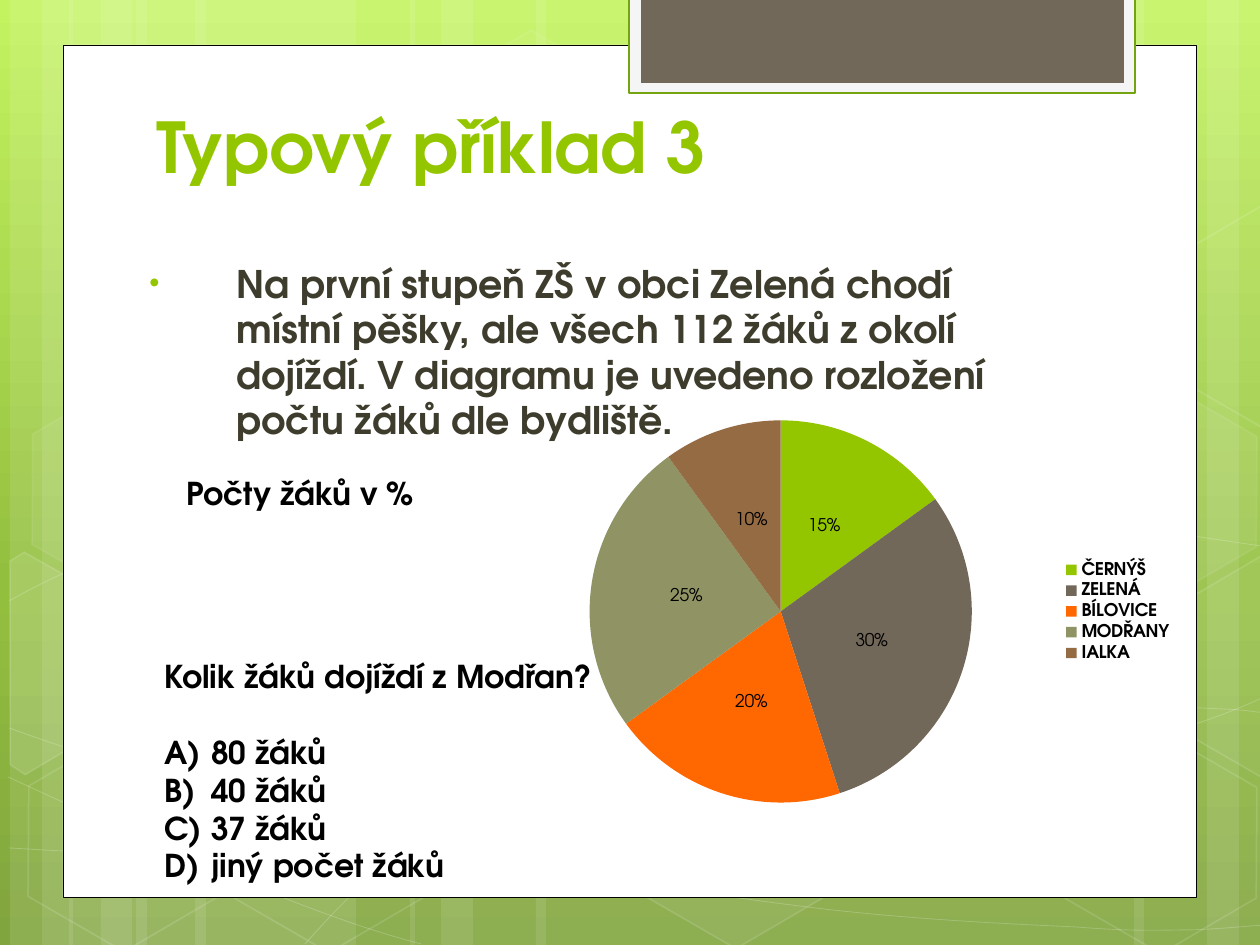
import math
import pptx
import pptx.util
import pptx.chart.data
import pptx.dml.color
import pptx.enum.chart
import pptx.enum.shapes
import pptx.enum.text
import pptx.oxml
import pptx.oxml.ns
import lxml.etree

FONT = "TeX Gyre Adventor"
COLORS = {
    "sky": "C3F35F", "grass": "93BF3F", "moss": "81A53E", "white": "FFFFFF",
    "black": "000000", "tab": "F5F5F5", "tab_line": "74A510", "lime": "94C600",
    "taupe": "71685A", "orange": "FF6700", "sage": "909465", "brown": "956B43",
    "olive": "3E3D2D",
}
SHAPES = pptx.enum.shapes.MSO_SHAPE
qn = pptx.oxml.ns.qn


def px(length):
    return pptx.util.Emu(round(length * 914400 / 126))


def rgb(name):
    return pptx.dml.color.RGBColor.from_string(COLORS[name])


def add_child(parent, tag, **attributes):
    return lxml.etree.SubElement(parent, qn(tag), {k: str(v) for k, v in attributes.items()})


def paint(fill, color, opacity=100):
    """Fill with a colour, or with nothing at zero opacity."""
    if not opacity:
        fill.background()
        return
    fill.solid()
    fill.fore_color.rgb = rgb(color)
    if opacity < 100:
        node = fill._xPr.find(qn("a:solidFill"))
        add_child(node[0], "a:alpha", val=opacity * 1000)


def style(shape, fill, opacity=100, line=None, width=1, line_opacity=100):
    shape.shadow.inherit = False
    paint(shape.fill, fill, opacity)
    if line:
        shape.line.width = pptx.util.Pt(width)
        paint(shape.line.fill, line, line_opacity)
    else:
        shape.line.fill.background()


def add_rect(page, box, *args, **kwargs):
    shape = page.shapes.add_shape(SHAPES.RECTANGLE, *map(px, box))
    style(shape, *args, **kwargs)


def add_outline(page, points, closed):
    builder = page.shapes.build_freeform(*points[0], scale=px(1))
    builder.add_line_segments(points[1:], close=closed)
    return builder.convert_to_shape()


def add_curve(page, points):
    """Joined cubic curves: a start, then three points per curve."""
    shape = add_outline(page, points, False)
    lines = shape._element.findall(".//" + qn("a:lnTo"))
    for first, second, third in zip(lines[::3], lines[1::3], lines[2::3]):
        first.tag = qn("a:cubicBezTo")
        for line in (second, third):
            first.append(line[0])
            line.getparent().remove(line)
    style(shape, "white", 0, "white", 0.5, 20)


def add_cut_hexagon(page, center, points, opacity):
    """Outline turned by 30 degrees around its center."""
    cos, sin = math.cos(math.pi / 6), math.sin(math.pi / 6)
    upright = []
    for x, y in points:
        dx, dy = x - center[0], y - center[1]
        upright.append((center[0] + dx * cos + dy * sin, center[1] - dx * sin + dy * cos))
    shape = add_outline(page, upright, True)
    shape.rotation = 30
    style(shape, "white", opacity, "white", 1, 12)


def add_backdrop(page, height):
    # Vertical gradient
    fill = page.background.fill
    fill.gradient()
    fill.gradient_angle = 270
    stops = page._element.find(".//" + qn("a:gsLst"))
    for stop in list(stops):
        stops.remove(stop)
    for position, color in ((0, "sky"), (62, "grass"), (100, "moss")):
        stop = add_child(stops, "a:gs", pos=position * 1000)
        add_child(stop, "a:srgbClr", val=COLORS[color])

    # Light stripes
    stripes = ((136, 220), (10, 63), (42, 105), (195, 220), (69, 63), (101, 105),
               (924, 220), (1207, 63), (1134, 105), (536, 388), (410, 63), (441, 105))
    for left, stripe_width in stripes:
        add_rect(page, (left, 0, stripe_width, height), "white", 10)

    # Sweeping curves
    curves = (
        ((9, 848), (77, 852), (145, 856), (239, 854), (334, 853), (451, 851), (577, 838),
         (703, 825), (882, 801), (998, 777), (1113, 753), (1231, 716), (1269, 694)),
        ((9, 601), (45, 581), (82, 562), (152, 543), (224, 524), (326, 496), (437, 488),
         (549, 479), (685, 478), (824, 488), (963, 498), (1193, 537), (1269, 547)),
        ((8, 777), (160, 847), (311, 916), (421, 944)),
        ((9, 728), (48, 742), (88, 756), (161, 776), (234, 795), (344, 827), (450, 848),
         (554, 869), (687, 892), (791, 905), (896, 919), (1008, 924), (1075, 927),
         (1140, 932), (1158, 930), (1191, 930), (1223, 929), (1246, 926), (1269, 925)),
        ((305, 944), (328, 919), (350, 893), (381, 871), (411, 848), (454, 823), (489, 805),
         (524, 788), (546, 780), (592, 767), (638, 754), (722, 737), (766, 728),
         (811, 719), (818, 719), (857, 717), (896, 713), (958, 709), (1000, 708),
         (1045, 707), (1116, 708), (1116, 708), (1116, 708), (1201, 708), (1201, 708),
         (1223, 709), (1245, 710), (1256, 712), (1267, 713), (1264, 712), (1268, 713)),
    )
    for curve in curves:
        add_curve(page, curve)

    # Hexagons: left, top, fill opacity, line opacity
    hexagons = ((421, 45, 4, 8), (626, 742, 6, 12), (14, 745, 0, 12), (18, 393, 7, 8),
                (219, 746, 0, 12), (949, 571, 10, 12), (1051, 747, 0, 12), (1051, 396, 7, 8))
    for left, top, opacity, line_opacity in hexagons:
        hexagon = page.shapes.add_shape(SHAPES.HEXAGON, px(left), px(top), px(220), px(192))
        hexagon.adjustments[0] = 0.285
        hexagon.rotation = 30
        style(hexagon, "white", opacity, "white", 1, line_opacity)

    # Hexagons cut by the slide edges
    left_cut = ((10, 561), (24, 552), (121, 607), (120, 718), (25, 774), (10, 765))
    add_cut_hexagon(page, (45, 674), left_cut, 10)
    right_cut = ((1167, 56), (1261, 1), (1271, 7), (1271, 217), (1263, 222), (1167, 167))
    for top, opacity in ((555, 4), (205, 0)):
        add_cut_hexagon(page, (1241, top + 100), [(x, top + y) for x, y in right_cut], opacity)


def add_panel(page, left, top, width, height):
    add_rect(page, (left, top, width, height), "white", line="black", width=0.5)
    # Tab hanging from the top edge
    add_rect(page, (left + 566, -2, 506, 95), "tab", line="tab_line", width=1.25)
    add_rect(page, (left + 578, -2, 483, 85), "taupe")


def write(para, text, size, color="black"):
    para.alignment = pptx.enum.text.PP_ALIGN.LEFT
    span = para.add_run()
    span.text = text
    span.font.name = FONT
    span.font.size = pptx.util.Pt(size)
    span.font.bold = True
    span.font.color.rgb = rgb(color)


def indent(para, margin, hanging):
    properties = para._p.get_or_add_pPr()
    properties.set("marL", str(px(margin)))
    properties.set("indent", str(-px(hanging)))
    return properties


def add_text(page, left, top, width, height):
    box = page.shapes.add_textbox(px(left), px(top), px(width), px(height))
    box.text_frame.word_wrap = True
    return box.text_frame


def add_title(page, *box):
    title = page.shapes.title
    title.left, title.top, title.width, title.height = map(px, box)
    title.text_frame.vertical_anchor = pptx.enum.text.MSO_ANCHOR.BOTTOM
    write(title.text_frame.paragraphs[0], "Typový příklad 3", 40, "lime")
    page.shapes._spTree.append(title._element)  # in front of the panel


def add_task(page, *box):
    para = add_text(page, *box).paragraphs[0]
    write(para, "Na první stupeň ZŠ v obci Zelená chodí místní pěšky, ale všech 112 žáků "
          "z okolí dojíždí. V diagramu je uvedeno rozložení počtu žáků dle bydliště.",
          21.7, "olive")
    properties = indent(para, 160, 87)
    add_child(add_child(properties, "a:buClr"), "a:srgbClr", val=COLORS["lime"])
    add_child(properties, "a:buSzPct", val=76000)
    add_child(properties, "a:buFont", typeface="Arial")
    add_child(properties, "a:buChar", char="•")


def add_question(page, *box):
    frame = add_text(page, *box)
    write(frame.paragraphs[0], "Kolik žáků dojíždí z Modřan?", 18)
    for i, answer in enumerate(("80 žáků", "40 žáků", "37 žáků", "jiný počet žáků")):
        para = frame.add_paragraph()
        write(para, answer, 18)
        if i == 0:
            para.space_before = pptx.util.Pt(21.7)
        add_child(indent(para, 47, 47), "a:buAutoNum", type="alphaUcParenR")


def add_pie(page, *box):
    data = pptx.chart.data.CategoryChartData(number_format="0%")
    data.categories = ("ČERNÝŠ", "ZELENÁ ", "BÍLOVICE", "MODŘANY ", "IALKA")
    data.add_series("Series 1", (0.15, 0.3, 0.2, 0.25, 0.1))
    chart = page.shapes.add_chart(pptx.enum.chart.XL_CHART_TYPE.PIE, *map(px, box), data).chart
    chart.has_title = False
    chart.font.name = FONT
    chart.font.size = pptx.util.Pt(10)
    chart.font.color.rgb = rgb("black")

    chart.has_legend = True
    chart.legend.position = pptx.enum.chart.XL_LEGEND_POSITION.RIGHT
    chart.legend.include_in_layout = False
    chart.legend.font.bold = True

    plot = chart.plots[0]
    plot.vary_by_categories = True
    for i, color in enumerate(("lime", "taupe", "orange", "sage", "brown")):
        paint(plot.series[0].points[i].format.fill, color)
    labels = plot.series[0].data_labels
    labels.show_value = True
    labels.number_format = "0%"
    labels.number_format_is_linked = False
    labels.position = pptx.enum.chart.XL_LABEL_POSITION.CENTER


def main():
    deck = pptx.Presentation()
    deck.slide_width, deck.slide_height = px(1260), px(945)
    page = deck.slides.add_slide(deck.slide_layouts[5])
    add_backdrop(page, 945)
    add_panel(page, 63, 45, 1134, 853)
    add_title(page, 144, 37, 1045, 157)
    add_task(page, 64, 254, 1012, 163)
    write(add_text(page, 174, 468, 525, 50).paragraphs[0], "Počty žáků v %", 18)
    add_question(page, 152, 651, 953, 242)
    add_pie(page, 501, 403, 689, 417)
    deck.save("out.pptx")


if __name__ == "__main__":
    main()
